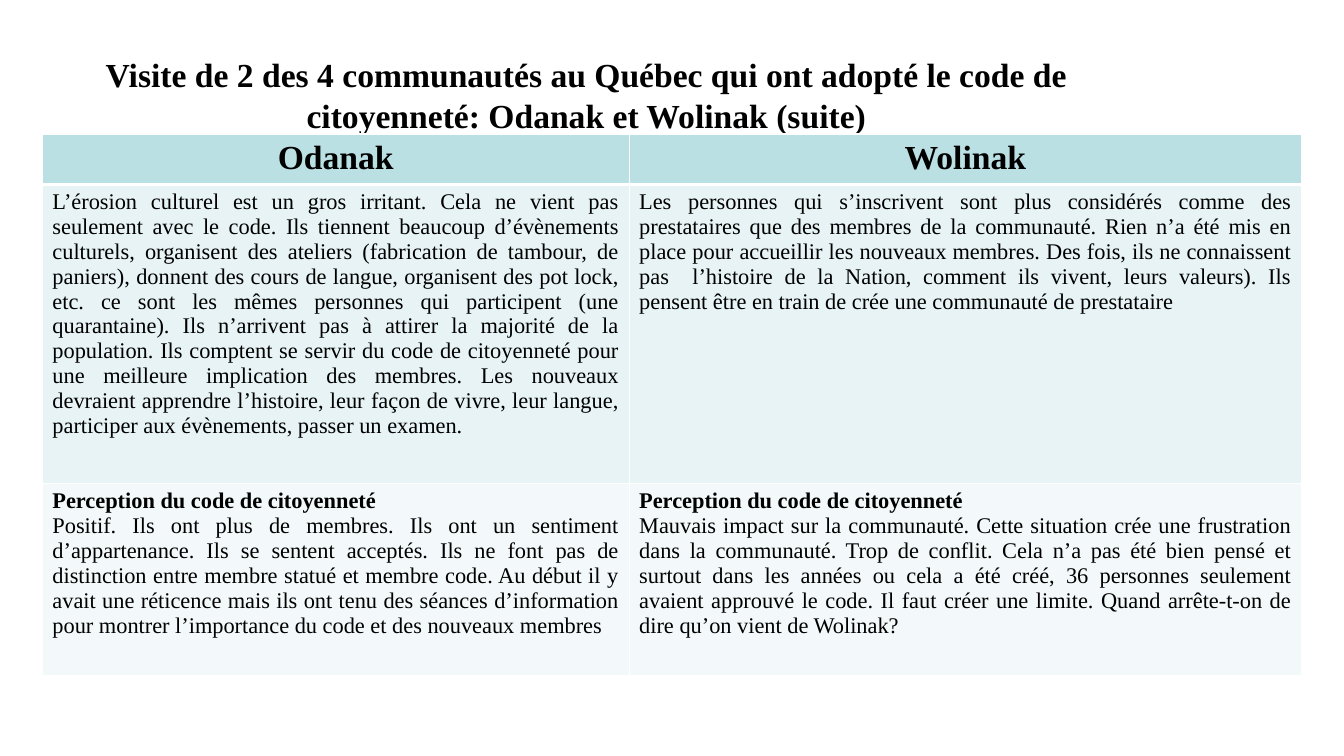
from lxml.etree import SubElement
from pptx import Presentation
from pptx.dml.color import RGBColor
from pptx.enum.text import MSO_ANCHOR, PP_ALIGN
from pptx.oxml.ns import qn
from pptx.util import Inches, Pt

FONT = "Times New Roman"
COLORS = {"text": "000000", "border": "FFFFFF"}
ROW_FILLS = ["BBE0E3", "E7F3F4", "F3F9FA"]

TITLE = "Visite de 2 des 4 communautés au Québec qui ont adopté le code de citoyenneté: Odanak et Wolinak (suite)"
PERCEPTION = "Perception du code de citoyenneté"
# Each cell is a list of paragraphs.
ROWS = [
    [["Odanak"], ["Wolinak"]],
    [
        ["L’érosion culturel est un gros irritant. Cela ne vient pas seulement avec le code. "
         "Ils tiennent beaucoup d’évènements culturels, organisent des ateliers (fabrication de "
         "tambour, de paniers), donnent des cours de langue, organisent des pot lock, etc. ce sont "
         "les mêmes personnes qui participent (une quarantaine). Ils n’arrivent pas à attirer la "
         "majorité de la population. Ils comptent se servir du code de citoyenneté pour une "
         "meilleure implication des membres. Les nouveaux devraient apprendre l’histoire, leur "
         "façon de vivre, leur langue, participer aux évènements, passer un examen."],
        ["Les personnes qui s’inscrivent sont plus considérés comme des prestataires que des "
         "membres de la communauté. Rien n’a été mis en place pour accueillir les nouveaux "
         "membres. Des fois, ils ne connaissent pas  l’histoire de la Nation, comment ils vivent, "
         "leurs valeurs). Ils pensent être en train de crée une communauté de prestataire"],
    ],
    [
        [PERCEPTION,
         "Positif. Ils ont plus de membres. Ils ont un sentiment d’appartenance. Ils se sentent "
         "acceptés. Ils ne font pas de distinction entre membre statué et membre code. Au début "
         "il y avait une réticence mais ils ont tenu des séances d’information pour montrer "
         "l’importance du code et des nouveaux membres"],
        [PERCEPTION,
         "Mauvais impact sur la communauté. Cette situation crée une frustration dans la "
         "communauté. Trop de conflit. Cela n’a pas été bien pensé et surtout dans les années ou "
         "cela a été créé, 36 personnes seulement avaient approuvé le code. Il faut créer une "
         "limite. Quand arrête-t-on de dire qu’on vient de Wolinak?"],
    ],
]
LEFT, TABLE_TOP = 0.42, 1.33
COL_WIDTHS = [5.82, 6.67]
ROW_HEIGHTS = [0.49, 2.97, 1.9]


def write(p, text, size=16, bold=False, align=PP_ALIGN.JUSTIFY):
    p.alignment = align
    r = p.add_run()
    r.text = text
    r.font.name = FONT
    r.font.size = Pt(size)
    r.font.bold = bold
    r.font.color.rgb = RGBColor.from_string(COLORS["text"])


def set_borders(cell, top, bottom):
    """Draw the four cell edges; fills must be set afterwards."""
    tc_pr = cell._tc.get_or_add_tcPr()
    for side, width in (("L", 1), ("R", 1), ("T", top), ("B", bottom)):
        ln = SubElement(tc_pr, qn(f"a:ln{side}"), w=str(Pt(width)))
        fill = SubElement(ln, qn("a:solidFill"))
        SubElement(fill, qn("a:srgbClr"), val=COLORS["border"])


def add_title(slide):
    sp = slide.shapes.add_textbox(Inches(LEFT), Inches(0.41), Inches(10.79), Inches(1.06))
    tf = sp.text_frame
    tf.word_wrap = True
    tf.vertical_anchor = MSO_ANCHOR.MIDDLE
    write(tf.paragraphs[0], TITLE, size=24, bold=True, align=PP_ALIGN.CENTER)


def add_comparison(slide):
    table = slide.shapes.add_table(
        len(ROWS), len(COL_WIDTHS), Inches(LEFT), Inches(TABLE_TOP),
        Inches(sum(COL_WIDTHS)), Inches(sum(ROW_HEIGHTS))).table
    for col, width in zip(table.columns, COL_WIDTHS):
        col.width = Inches(width)
    for i, (row, height) in enumerate(zip(ROWS, ROW_HEIGHTS)):
        table.rows[i].height = Inches(height)
        for j, paragraphs in enumerate(row):
            cell = table.cell(i, j)
            set_borders(cell, top=3 if i == 1 else 1, bottom=3 if i == 0 else 1)
            cell.fill.solid()
            cell.fill.fore_color.rgb = RGBColor.from_string(ROW_FILLS[i])
            tf = cell.text_frame
            for k, text in enumerate(paragraphs):
                p = tf.add_paragraph() if k else tf.paragraphs[0]
                if i == 0:
                    write(p, text, size=24, bold=True, align=PP_ALIGN.CENTER)
                else:
                    write(p, text, bold=text == PERCEPTION)


def main():
    prs = Presentation()
    prs.slide_width, prs.slide_height = Inches(13.33), Inches(7.5)
    slide = prs.slides.add_slide(prs.slide_layouts[6])
    add_title(slide)
    add_comparison(slide)
    prs.save("out.pptx")


if __name__ == "__main__":
    main()
